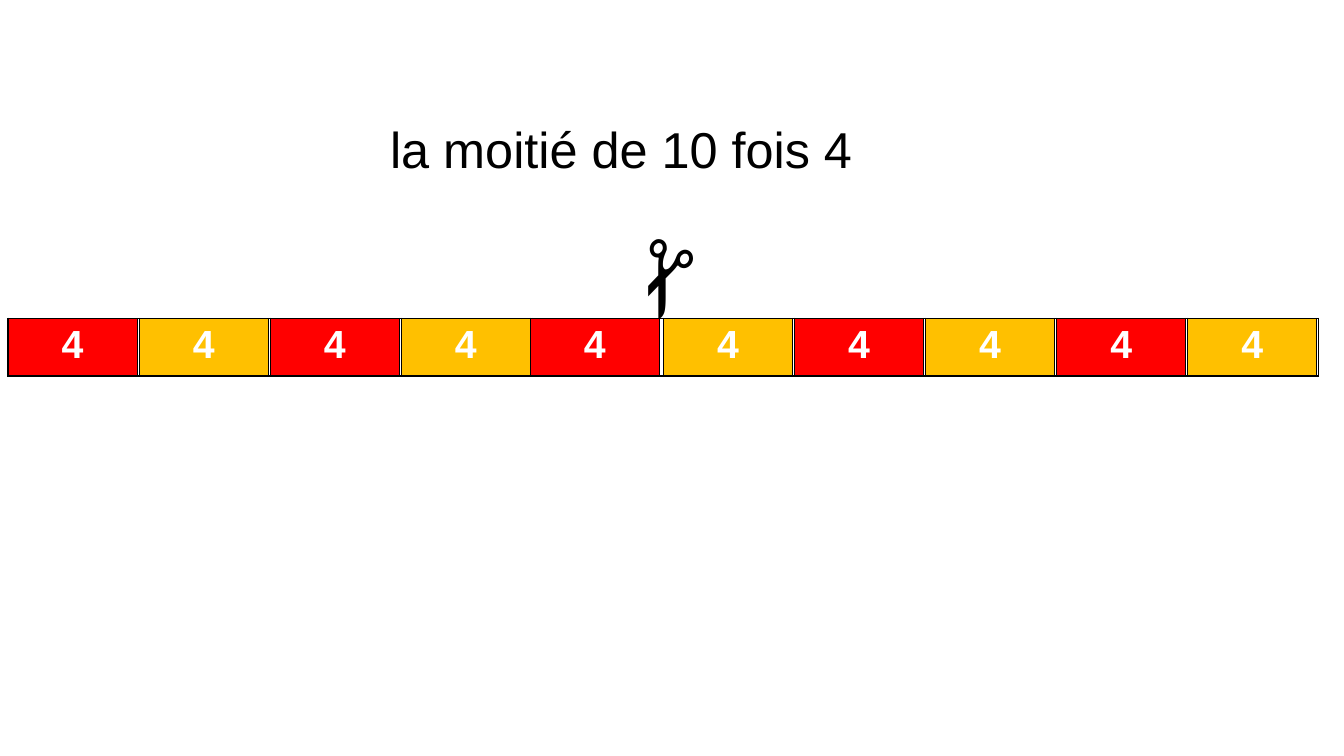
from lxml.etree import SubElement as Sub, Element
from pptx import Presentation
from pptx.dml.color import RGBColor as RGB
from pptx.enum.text import MSO_AUTO_SIZE as Auto, PP_ALIGN as Align
from pptx.oxml.ns import qn
from pptx.util import Inches, Pt


def color(code):
    return RGB.from_string(code)


class Board:
    """Draws text and number strips on one slide in a shared style."""

    font = "Arial"
    ink = "000000"

    def __init__(self, slide):
        self.slide = slide

    def style(self, para, size, code, bold=False):
        for run in para.runs:
            run.font.name = self.font
            run.font.size = Pt(size)
            run.font.bold = bold
            run.font.color.rgb = color(code)

    def text(self, words, left, top, width, height, size, turn=0):
        box = self.slide.shapes.add_textbox(
            Inches(left), Inches(top), Inches(width), Inches(height))
        box.rotation = turn
        frame = box.text_frame
        frame.word_wrap = True
        frame.auto_size = Auto.SHAPE_TO_FIT_TEXT
        frame.text = words
        self.style(frame.paragraphs[0], size, self.ink)

    def border(self, cell):
        props = cell._tc.get_or_add_tcPr()
        for spot, side in enumerate(("lnL", "lnR", "lnT", "lnB")):
            line = Element(qn(f"a:{side}"), w=str(Pt(1)))
            fill = Sub(line, qn("a:solidFill"))
            Sub(fill, qn("a:srgbClr"), val=self.ink)
            props.insert(spot, line)

    def strip(self, left, top, width, height, count=1, label="", fill=None):
        table = self.slide.shapes.add_table(
            1, count, Inches(left), Inches(top),
            Inches(width * count), Inches(height)).table
        table.first_row = False
        table.horz_banding = False
        for cell in table.iter_cells():
            if fill:
                cell.fill.solid()
                cell.fill.fore_color.rgb = color(fill)
            else:
                cell.fill.background()
            self.border(cell)
            if label:
                cell.text = label
                para = cell.text_frame.paragraphs[0]
                para.alignment = Align.CENTER
                self.style(para, 28, "FFFFFF", True)


def main():
    deck = Presentation()
    deck.slide_width = Inches(13.33)
    deck.slide_height = Inches(7.5)
    board = Board(deck.slides.add_slide(deck.slide_layouts[6]))

    left, top, step, wide, high = 0.08, 3.16, 1.3, 1.28, 0.57
    board.strip(left, top, step, high, count=10)
    for pair in range(5):
        start = left + 2 * step * pair
        nudge = 0.02 if pair == 2 else 0
        board.strip(start + step, top, wide, high, label="4", fill="FFC000")
        board.strip(start - nudge, top, wide, high, label="4", fill="FF0000")

    board.text("la moitié de 10 fois 4", 3.77, 1.12, 4.89, 0.71, 36)
    board.text("✁", 6.05, 2.2, 1.17, 1.31, 72, turn=90)
    deck.save("out.pptx")


if __name__ == "__main__":
    main()
